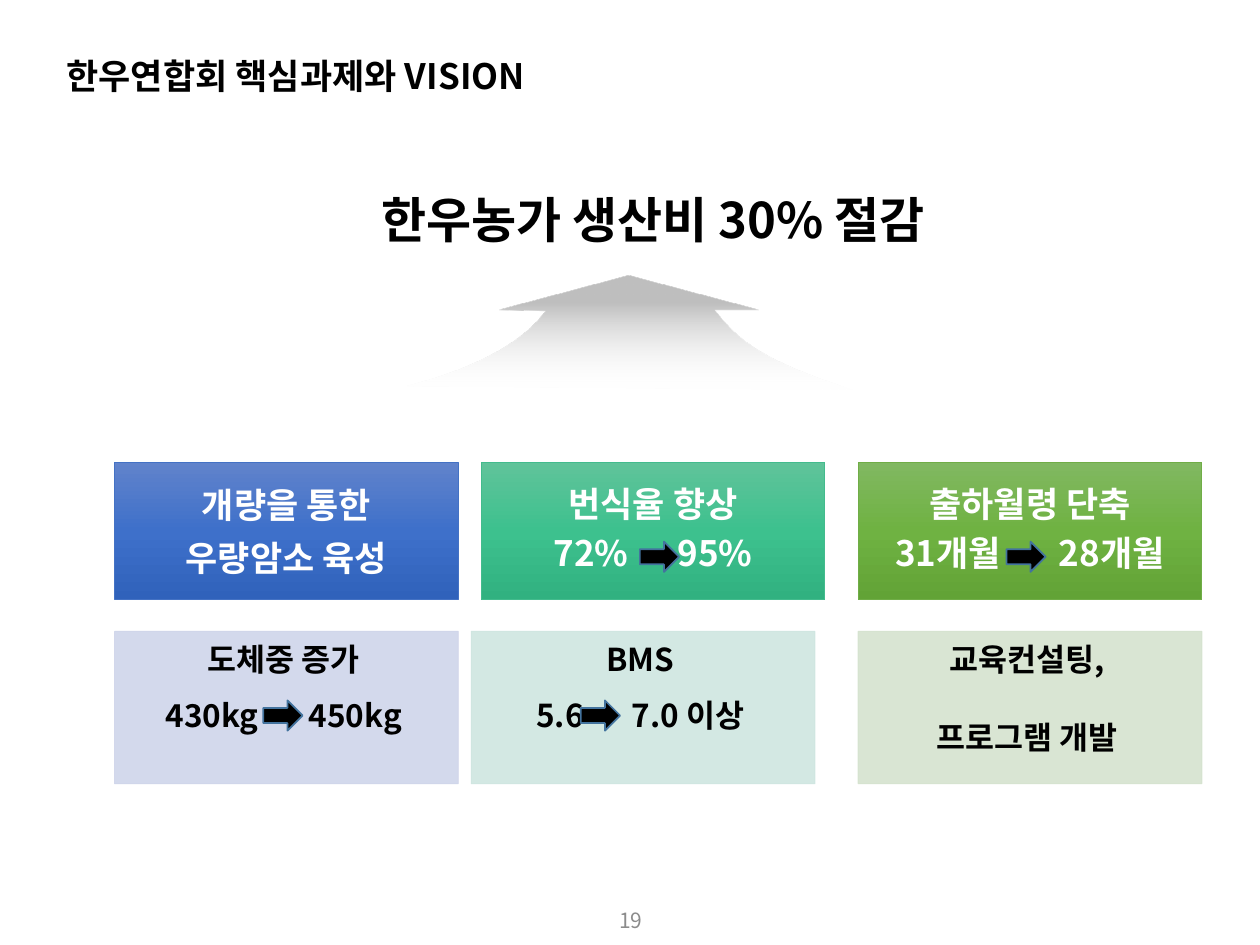
"""Build the slide on core tasks and vision for lowering beef farm costs."""
import pptx
import pptx.dml.color
import pptx.enum.shapes
import pptx.enum.text
import pptx.oxml.ns
import pptx.util
from lxml import etree

Cm = pptx.util.Cm
Pt = pptx.util.Pt
RGBColor = pptx.dml.color.RGBColor
Shape = pptx.enum.shapes.MSO_SHAPE
Align = pptx.enum.text.PP_ALIGN
Anchor = pptx.enum.text.MSO_ANCHOR
qn = pptx.oxml.ns.qn

BLACK = RGBColor(0x00, 0x00, 0x00)
WHITE = RGBColor(0xFF, 0xFF, 0xFF)
GREY = RGBColor(0x8C, 0x8C, 0x8C)
SILVER = RGBColor(0xBF, 0xBF, 0xBF)
STEEL = RGBColor(0x43, 0x73, 0x9E)
BLUE = RGBColor(0x44, 0x72, 0xC4)
BLUES = [RGBColor(0x61, 0x83, 0xCB), RGBColor(0x3E, 0x70, 0xCA), RGBColor(0x30, 0x62, 0xBB)]
TEAL = RGBColor(0x43, 0xBB, 0x8D)
TEALS = [RGBColor(0x60, 0xC3, 0x9A), RGBColor(0x3D, 0xC1, 0x8E), RGBColor(0x31, 0xB1, 0x80)]
GREEN = RGBColor(0x70, 0xAD, 0x47)
GREENS = [RGBColor(0x81, 0xB8, 0x61), RGBColor(0x6F, 0xB2, 0x42), RGBColor(0x62, 0xA3, 0x36)]
PALE_BLUE = RGBColor(0xCF, 0xD5, 0xEA)
PALE_TEAL = RGBColor(0xCF, 0xE6, 0xE0)
PALE_GREEN = RGBColor(0xD5, 0xE3, 0xCF)
FONT = "Noto Sans CJK KR"


def write(box, lines, size, color, bold, frame_format, para_format, gap=0, arrow_room=0):
    frame = box.text_frame
    for name, value in {"word_wrap": True, **frame_format}.items():
        setattr(frame, name, value)
    for index, line in enumerate(lines):
        para = frame.paragraphs[0] if index == 0 else frame.add_paragraph()
        for name, value in para_format.items():
            setattr(para, name, value)
        if index:
            para.space_before = Pt(gap)
        parts = [line] if isinstance(line, str) else [line[0], " ", line[1]]
        for part in parts:
            span = para.add_run()
            span.text = part
            for name, value in {"name": FONT, "size": Pt(size), "bold": bold}.items():
                setattr(span.font, name, value)
            span.font.color.rgb = color
            props = span._r.get_or_add_rPr()
            etree.SubElement(props, qn("a:ea"), typeface=FONT)
            if part == " ":
                props.set("spc", str(int(arrow_room * 100)))


def shade(shape, stops):
    shape.fill.gradient()
    shape.fill.gradient_angle = 270
    holder = shape._element.spPr.find(".//" + qn("a:gsLst"))
    for stop in list(holder):
        holder.remove(stop)
    for place, color, alpha in stops:
        stop = etree.SubElement(holder, qn("a:gs"), pos=str(place * 1000))
        tint = etree.SubElement(stop, qn("a:srgbClr"), val=str(color))
        if alpha < 100:
            etree.SubElement(tint, qn("a:alpha"), val=str(alpha * 1000))


deck = pptx.Presentation()
deck.slide_width, deck.slide_height = Cm(25.4), Cm(19.05)
page = deck.slides.add_slide(deck.slide_layouts[6])

middle = {"vertical_anchor": Anchor.MIDDLE}
labels = [
    ("19", (9.86, 18.03, 5.72, 1.02), 12, GREY, False, middle, {"alignment": Align.CENTER}),
    ("한우농가 생산비 30% 절감", (3.71, 3.3, 18.92, 2.21), 28, BLACK, True, middle,
     {"alignment": Align.CENTER}),
    ("한우연합회 핵심과제와 VISION", (0.89, 1.04, 19.2, 1.07), 20, BLACK, True,
     {**middle, "margin_left": Cm(0.45)}, {"alignment": Align.LEFT, "line_spacing": 0.9}),
]
for text, place, size, color, bold, frame_format, para_format in labels:
    box = page.shapes.add_textbox(*map(Cm, place))
    write(box, [text], size, color, bold, frame_format, para_format)

right_curve = [(17.2, 7.85), (15.42, 7.29), (14.88, 6.88), (14.4, 6.25)]
left_curve = [(11, 6.27), (10.62, 6.81), (9.73, 7.39), (8.2, 7.77)]
tip = [(15.29, 6.25), (12.67, 5.56), (10.06, 6.25)]
steps = 16
curves = []
for curve in (right_curve, left_curve):
    points = []
    for step in range(steps + 1):
        t = step / steps
        weights = ((1 - t) ** 3, 3 * t * (1 - t) ** 2, 3 * t ** 2 * (1 - t), t ** 3)
        points.append(tuple(sum(w * p[axis] for w, p in zip(weights, curve)) for axis in (0, 1)))
    curves.append(points)
outline = [(Cm(x), Cm(y)) for x, y in curves[0] + tip + curves[1]]
builder = page.shapes.build_freeform(*outline[0])
builder.add_line_segments(outline[1:], close=True)
rise = builder.convert_to_shape()
rise.shadow.inherit = False
rise.line.fill.background()
shade(rise, [(24, SILVER, 100), (100, WHITE, 0)])

goal_frame = {"vertical_anchor": Anchor.MIDDLE, "margin_left": Cm(0.41), "margin_right": Cm(0.41),
              "margin_top": Cm(0.23), "margin_bottom": Cm(0.23)}
goals = [
    (2.31, BLUES, BLUE, ["개량을 통한", "우량암소 육성"], 1.0, 0),
    (9.7, TEALS, TEAL, ["번식율 향상", ("72%", "95%")], 0.9, 23.5),
    (17.3, GREENS, GREEN, ["출하월령 단축", ("31개월", "28개월")], 0.9, 28.5),
]
for left, colors, edge, lines, spacing, arrow_room in goals:
    card = page.shapes.add_shape(Shape.RECTANGLE, Cm(left), Cm(9.32), Cm(6.93), Cm(2.77))
    card.shadow.inherit = False
    shade(card, [(50 * index, color, 100) for index, color in enumerate(colors)])
    card.line.color.rgb = edge
    card.line.width = Pt(0.5)
    write(card, lines, 20, WHITE, True, goal_frame,
          {"alignment": Align.CENTER, "line_spacing": spacing}, 6.5, arrow_room)

task_frame = {"vertical_anchor": Anchor.TOP, "margin_left": Cm(0.25), "margin_right": Cm(0.36),
              "margin_top": Cm(0.25), "margin_bottom": Cm(0.41)}
tasks = [
    (2.31, PALE_BLUE, ["도체중 증가", ("430kg", "450kg")], 13, 24.5),
    (9.5, PALE_TEAL, ["BMS", ("5.6", "7.0 이상")], 13, 23.5),
    (17.3, PALE_GREEN, ["교육컨설팅,", "프로그램 개발"], 25.5, 0),
]
for left, color, lines, gap, arrow_room in tasks:
    card = page.shapes.add_shape(Shape.RECTANGLE, Cm(left), Cm(12.73), Cm(6.93), Cm(3.07))
    card.shadow.inherit = False
    card.fill.solid()
    card.fill.fore_color.rgb = color
    card.line.color.rgb = color
    card.line.width = Pt(0.5)
    for tint in card._element.spPr.iter(qn("a:srgbClr")):
        etree.SubElement(tint, qn("a:alpha"), val="90000")
    write(card, lines, 18, BLACK, True, task_frame,
          {"alignment": Align.CENTER, "line_spacing": 0.9}, gap, arrow_room)

for left, top in [(12.9, 10.92), (20.29, 10.92), (5.31, 14.12), (11.71, 14.12)]:
    arrow = page.shapes.add_shape(Shape.RIGHT_ARROW, Cm(left), Cm(top), Cm(0.79), Cm(0.61))
    arrow.shadow.inherit = False
    arrow.fill.solid()
    arrow.fill.fore_color.rgb = BLACK
    arrow.line.color.rgb = STEEL
    arrow.line.width = Pt(1)

deck.save("out.pptx")
